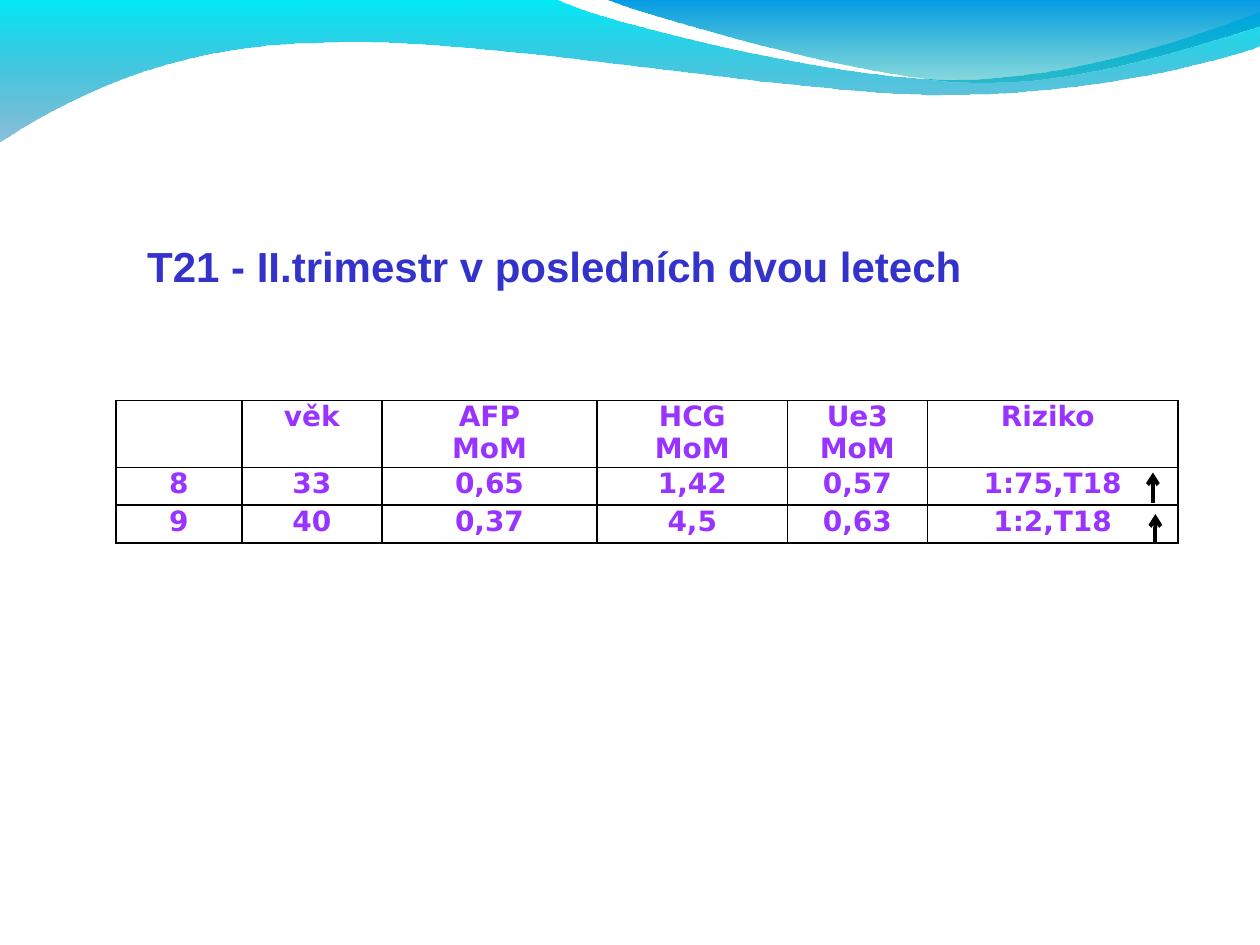
"""Build the slide with the second-trimester T21 results table."""
from lxml import etree
from pptx import Presentation
from pptx.dml.color import RGBColor
from pptx.enum import shapes, text
from pptx.oxml import parse_xml
from pptx.oxml.ns import nsdecls, qn
from pptx.util import Inches, Pt

BLACK = RGBColor(0x00, 0x00, 0x00)
BLUE = RGBColor(0x33, 0x33, 0xCC)
PURPLE = RGBColor(0x99, 0x33, 0xFF)
CYAN = RGBColor(0x00, 0xEB, 0xF8)
TEAL = RGBColor(0x00, 0x79, 0xAF)
SKY = RGBColor(0x00, 0x9B, 0xE5)
SEA = RGBColor(0x00, 0xAD, 0xB6)

LARGE_WAVE = [
    [(0, -0.01)], [(4.4, -0.01)],
    [(4.76, 0.17), (6.64, 0.63), (7.58, 0.63)],
    [(8.53, 0.63), (9.58, 0.26), (10, 0.09)],
    [(10.01, 0.36)],
    [(9.83, 0.44), (8.7, 0.76), (7.46, 0.75)],
    [(6.22, 0.75), (3.82, 0.28), (2.57, 0.34)],
    [(1.29, 0.35), (0.46, 0.83), (-0.01, 1.13)],
    [(0, -0.01)],
]
SMALL_WAVE = [
    [(4.79, -0.01)],
    [(5.09, 0.11), (6.82, 0.62), (7.69, 0.65)],
    [(8.56, 0.69), (9.61, 0.32), (10, 0.21)],
    [(10, 0)], [(4.79, -0.01)],
]
COLUMNS = [1, 1.11, 1.71, 1.51, 1.11, 1.99]
ROWS = [0.53, 0.3, 0.3]
RESULTS = [
    ["", "věk", "AFP\nMoM", "HCG\nMoM", "Ue3\nMoM", "Riziko "],
    ["8", "33", "0,65", "1,42", "0,57", "1:75,T18"],
    ["9", "40", "0,37", "4,5", "0,63", "1:2,T18"],
]
CELL_FONT = {"size": Pt(16), "bold": True, "name": "DejaVu Sans"}
TITLE_FONT = {"size": Pt(24), "bold": True, "name": "Arial"}
CELL_MARGINS = {"margin_left": 0.07, "margin_right": 0.07, "margin_top": 0, "margin_bottom": 0}


def set_font(font, color, values):
    font.color.rgb = color
    for name, value in values.items():
        setattr(font, name, value)


def bend_curves(sp, segments):
    lines = iter(sp._element.findall(".//" + qn("a:lnTo")))
    for segment in segments[1:]:
        steps = [next(lines) for _ in segment]
        if len(steps) == 3:
            curve = etree.Element(qn("a:cubicBezTo"))
            steps[0].addprevious(curve)
            for step in steps:
                curve.append(step[0])
                step.getparent().remove(step)


def add_wave(s, segments, top_color, bottom_color):
    points = [(Inches(x), Inches(y)) for segment in segments for x, y in segment]
    builder = s.shapes.build_freeform(*points[0])
    builder.add_line_segments(points[1:], close=True)
    sp = builder.convert_to_shape()
    bend_curves(sp, segments)
    sp.shadow.inherit = False
    sp.line.fill.background()
    sp.fill.gradient()
    sp.fill.gradient_angle = 270
    stops = sp.fill.gradient_stops
    for stop, position, color in zip(stops, (0, 1), (top_color, bottom_color)):
        stop.position = position
        stop.color.rgb = color
    last_color = sp._element.spPr.findall(".//" + qn("a:srgbClr"))[-1]
    etree.SubElement(last_color, qn("a:alpha"), val="45000")


def add_borders(cell):
    tcPr = cell._tc.get_or_add_tcPr()
    for i, side in enumerate("LRTB"):
        tcPr.insert(i, parse_xml(
            f'<a:ln{side} {nsdecls("a")} w="12700"><a:solidFill>'
            f'<a:srgbClr val="{BLACK}"/></a:solidFill></a:ln{side}>'))


def fill_cell(cell, content):
    cell.fill.background()
    add_borders(cell)
    if not content:
        return
    for name, value in CELL_MARGINS.items():
        setattr(cell, name, Inches(value))
    cell.text = content
    for p in cell.text_frame.paragraphs:
        p.alignment = text.PP_ALIGN.CENTER
        set_font(p.runs[0].font, PURPLE, CELL_FONT)


def add_results(s):
    table = s.shapes.add_table(
        len(ROWS), len(COLUMNS), Inches(0.92), Inches(3.18),
        Inches(sum(COLUMNS)), Inches(sum(ROWS))).table
    table.first_row = table.horz_banding = False
    for column, width in zip(table.columns, COLUMNS):
        column.width = Inches(width)
    for row, height, values in zip(table.rows, ROWS, RESULTS):
        row.height = Inches(height)
        for cell, value in zip(row.cells, values):
            fill_cell(cell, value)


def add_up_arrow(s, x, bottom, length=0.24):
    line = s.shapes.add_connector(
        shapes.MSO_CONNECTOR.STRAIGHT,
        Inches(x), Inches(bottom), Inches(x), Inches(bottom - length))
    line.line.color.rgb = BLACK
    line.line.width = Pt(2.25)
    etree.SubElement(line.line._get_or_add_ln(), qn("a:tailEnd"), type="arrow")
    etree.SubElement(line._element.spPr, qn("a:effectLst"))


def add_title(s, content):
    tf = s.shapes.add_textbox(Inches(1.07), Inches(1.94), Inches(8.12), Inches(0.42)).text_frame
    tf.word_wrap = True
    tf.auto_size = text.MSO_AUTO_SIZE.SHAPE_TO_FIT_TEXT
    p = tf.paragraphs[0]
    p.line_spacing = 0.8
    r = p.add_run()
    r.text = content
    set_font(r.font, BLUE, TITLE_FONT)


def main():
    prs = Presentation()
    prs.slide_width, prs.slide_height = Inches(10), Inches(7.5)
    s = prs.slides.add_slide(prs.slide_layouts[6])
    add_wave(s, LARGE_WAVE, CYAN, TEAL)
    add_wave(s, SMALL_WAVE, SKY, SEA)
    add_results(s)
    add_up_arrow(s, 9.15, 3.99)
    add_up_arrow(s, 9.17, 4.32)
    add_title(s, "T21 - II.trimestr v posledních dvou letech")
    prs.save("out.pptx")


if __name__ == "__main__":
    main()
